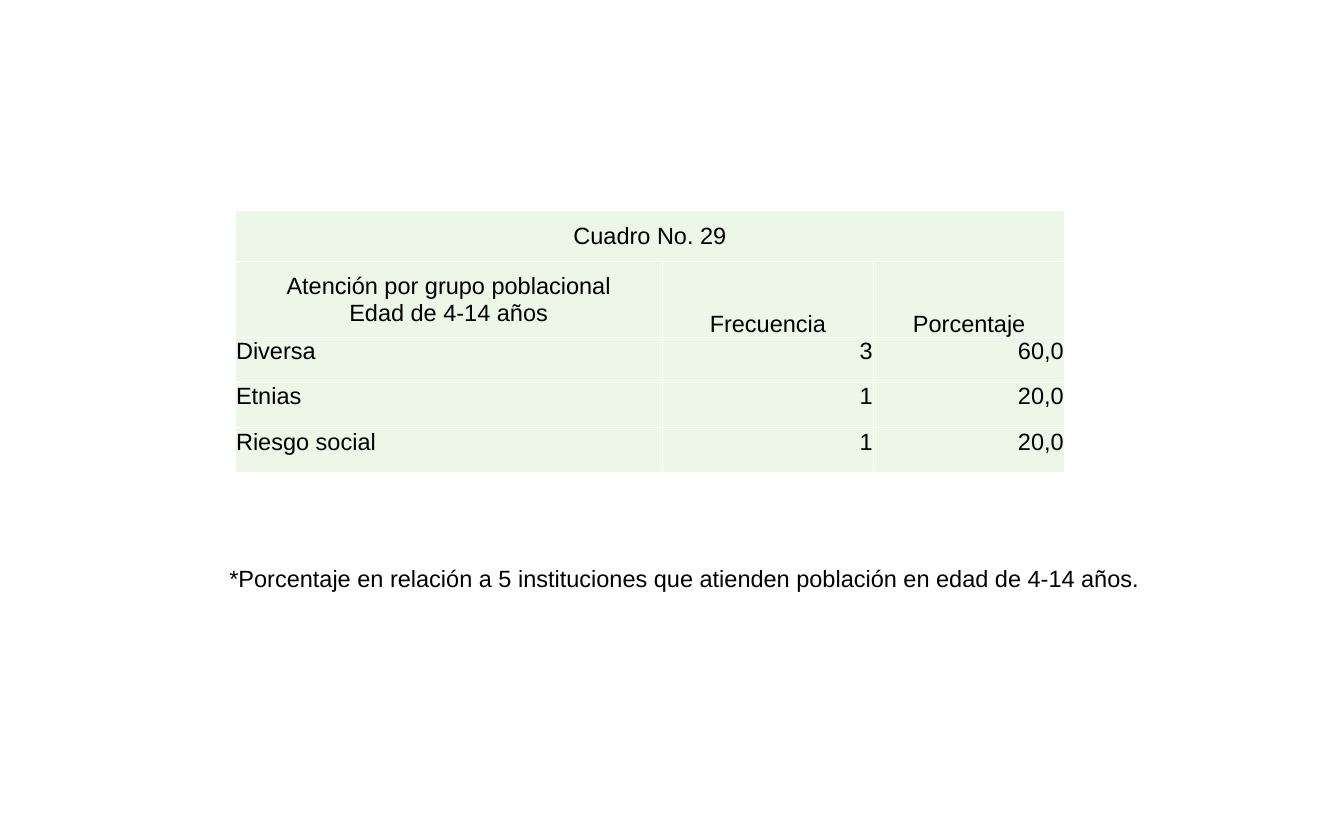
"""Build the slide with table 29 on care by population group."""
import pptx
import pptx.dml.color
import pptx.enum.text
import pptx.oxml
import pptx.oxml.ns
import pptx.util

SCALE = 9144
COLORS = {"cell": "ECF7E8", "edge": "FFFFFF", "text": "000000"}
FONT = {"name": "Arial", "size": pptx.util.Pt(18), "bold": False}
ALIGN = pptx.enum.text.PP_ALIGN
ANCHOR = pptx.enum.text.MSO_ANCHOR
COLS = [454, 225, 203]
ROWS = [54, 81, 48, 48, 48]
DATA = [
    ["Cuadro No. 29", "", ""],
    ["Atención por grupo poblacional\nEdad de 4-14 años", "Frecuencia", "Porcentaje"],
    ["Diversa", "3", "60,0"],
    ["Etnias", "1", "20,0"],
    ["Riesgo social", "1", "20,0"],
]
NOTE = "*Porcentaje en relación a 5 instituciones que atienden población en edad de 4-14 años."


def px(*vals):
    """Turn px lengths into EMU."""
    return [pptx.util.Emu(val * SCALE) for val in vals]


def apply(item, form):
    """Set each attribute in a dict of format values."""
    for key, val in form.items():
        setattr(item, key, val)


def tint(key):
    """Return the named colour."""
    return pptx.dml.color.RGBColor.from_string(COLORS[key])


def write(frame, text, align):
    """Fill a text frame with styled paragraphs."""
    frame.text = text
    for para in frame.paragraphs:
        para.alignment = align
        apply(para.font, FONT)
        para.font.color.rgb = tint("text")


def edge(cell):
    """Draw a thin line on all four sides of a cell."""
    props = cell._tc.get_or_add_tcPr()
    for side in "LRTB":
        props.append(pptx.oxml.parse_xml(
            f'<a:ln{side} {pptx.oxml.ns.nsdecls("a")} w="12700"><a:solidFill>'
            f'<a:srgbClr val="{COLORS["edge"]}"/></a:solidFill></a:ln{side}>'))


def place(row, col):
    """Return the alignment and anchor for a grid position."""
    if row < 2:
        return ALIGN.CENTER, ANCHOR.BOTTOM if col else ANCHOR.MIDDLE
    return ALIGN.RIGHT if col else ALIGN.LEFT, ANCHOR.TOP


def style(cell, text, align, anchor):
    """Fill and format one table cell."""
    inset, base = px(1, 0)
    apply(cell, {"margin_left": inset, "margin_top": inset, "margin_right": inset,
                 "margin_bottom": base, "vertical_anchor": anchor})
    edge(cell)
    cell.fill.solid()
    cell.fill.fore_color.rgb = tint("cell")
    write(cell.text_frame, text, align)


def add_grid(slide, left, top):
    """Add the table with its merged title row."""
    box = px(left, top, sum(COLS), sum(ROWS))
    table = slide.shapes.add_table(len(ROWS), len(COLS), *box).table
    apply(table, {"first_row": False, "horz_banding": False})
    for col, width in zip(table.columns, px(*COLS)):
        col.width = width
    for row, height in zip(table.rows, px(*ROWS)):
        row.height = height
    for row, line in enumerate(DATA):
        for col, text in enumerate(line):
            style(table.cell(row, col), text, *place(row, col))
    table.cell(0, 0).merge(table.cell(0, len(COLS) - 1))


def add_note(slide, text, *box):
    """Add a text box that grows with its text."""
    frame = slide.shapes.add_textbox(*px(*box)).text_frame
    apply(frame, {"word_wrap": True,
                  "auto_size": pptx.enum.text.MSO_AUTO_SIZE.SHAPE_TO_FIT_TEXT})
    write(frame, text, ALIGN.LEFT)


def main():
    """Build and save the slide."""
    deck = pptx.Presentation()
    wide, high = px(1429, 890)
    apply(deck, {"slide_width": wide, "slide_height": high})
    slide = deck.slides.add_slide(deck.slide_layouts[6])
    add_grid(slide, 250, 224)
    add_note(slide, NOTE, 234, 595, 1008, 40)
    deck.save("out.pptx")


if __name__ == "__main__":
    main()
